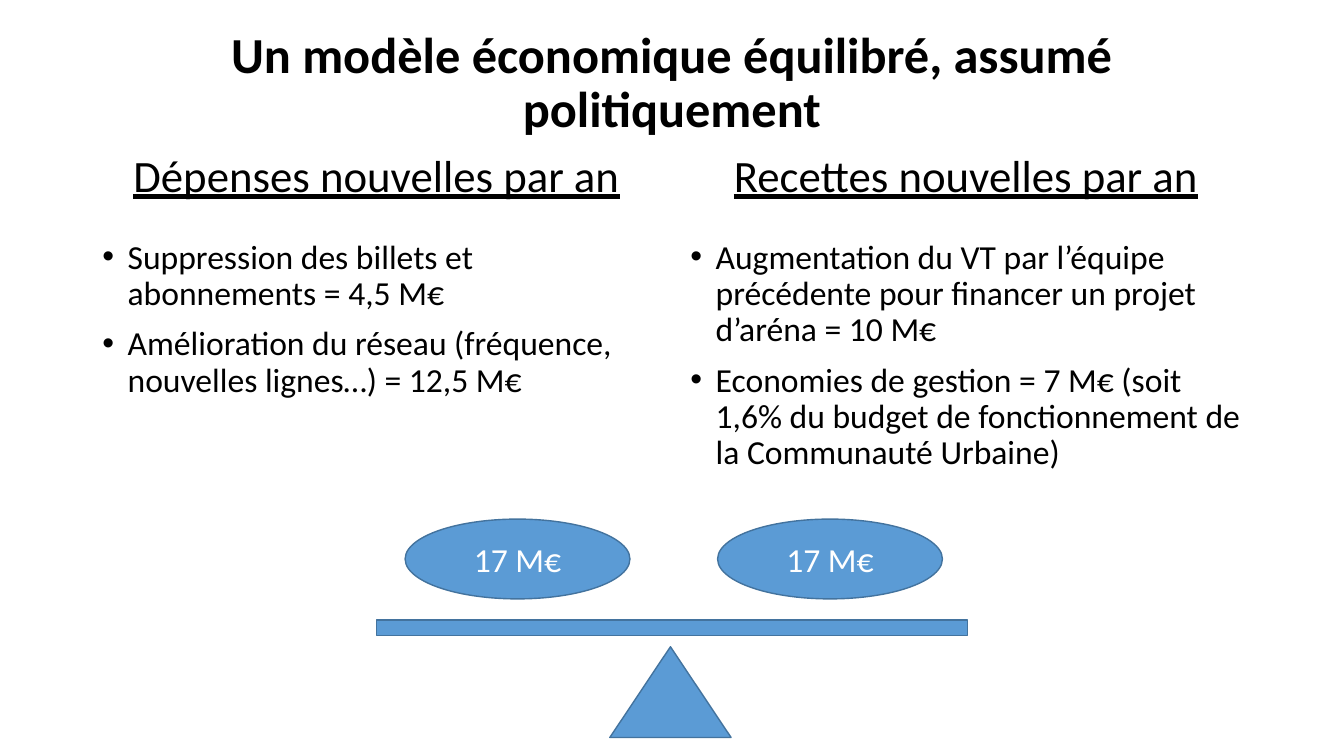
from lxml.etree import SubElement as Sub
from pptx import Presentation
from pptx.dml.color import RGBColor
from pptx.enum.shapes import MSO_SHAPE as Kind
from pptx.enum.text import MSO_ANCHOR as Anchor, MSO_AUTO_SIZE as Auto, PP_ALIGN as Align
from pptx.oxml.ns import qn
from pptx.util import Pt


def color(code):
    return RGBColor.from_string(code)


class Deck:
    font, ink, fill, edge, light = "Calibri", "000000", "5B9BD5", "43739E", "FFFFFF"

    def __init__(self, wide, high):
        self.prs = Presentation()
        self.prs.slide_width, self.prs.slide_height = Pt(wide), Pt(high)
        self.slide = self.prs.slides.add_slide(self.prs.slide_layouts[4])
        self.slots = {p.placeholder_format.idx: p for p in self.slide.placeholders}

    def add_text(self, par, text, size, ink, bold=False, line=False):
        run = par.add_run()
        run.text = text
        font = run.font
        font.name, font.size, font.bold, font.underline = self.font, Pt(size), bold, line
        font.color.rgb = color(ink)

    def place(self, idx, box, anchor):
        slot = self.slots[idx]
        slot.left, slot.top, slot.width, slot.height = map(Pt, box)
        frame = slot.text_frame
        frame.word_wrap, frame.auto_size = True, Auto.NONE
        frame.vertical_anchor = anchor
        return frame

    def head(self, idx, box, text, size, anchor=Anchor.TOP, **style):
        par = self.place(idx, box, anchor).paragraphs[0]
        par.alignment, par.line_spacing, par.space_before = Align.CENTER, 0.9, Pt(0)
        self.add_text(par, text, size, self.ink, **style)

    def points(self, idx, box, items):
        frame = self.place(idx, box, Anchor.TOP)
        for n, text in enumerate(items):
            par = frame.add_paragraph() if n else frame.paragraphs[0]
            props = par._p.get_or_add_pPr()
            props.set("marL", str(Pt(18)))
            props.set("indent", str(Pt(-18)))
            Sub(props, qn("a:buFont"), typeface="Arial")
            Sub(props, qn("a:buChar"), char="•")
            par.alignment, par.line_spacing = Align.LEFT, 0.9
            par.space_before = Pt(10 if n else 0)
            self.add_text(par, text, 24, self.ink)

    def shape(self, kind, box, text=None):
        item = self.slide.shapes.add_shape(kind, *map(Pt, box))
        item.shadow.inherit = False
        item.fill.solid()
        item.fill.fore_color.rgb = color(self.fill)
        item.line.color.rgb = color(self.edge)
        item.line.width = Pt(1)
        if text:
            item.text_frame.vertical_anchor = Anchor.MIDDLE
            par = item.text_frame.paragraphs[0]
            par.alignment = Align.CENTER
            self.add_text(par, text, 24, self.light)


def main():
    deck = Deck(960, 540)

    # Title
    deck.head(0, (66, 8, 828, 104.4), "Un modèle économique équilibré, assumé politiquement",
              36, Anchor.MIDDLE, bold=True)

    # Spending and income columns
    sides = [
        (66, 406, "Dépenses nouvelles par an", [
            "Suppression des billets et abonnements = 4,5 M€",
            "Amélioration du réseau (fréquence, nouvelles lignes…) = 12,5 M€"]),
        (486, 408, "Recettes nouvelles par an", [
            "Augmentation du VT par l’équipe précédente pour financer un projet d’aréna = 10 M€",
            "Economies de gestion = 7 M€ (soit 1,6% du budget de fonctionnement "
            "de la Communauté Urbaine)"]),
    ]
    for n, (left, wide, name, items) in enumerate(sides):
        deck.head(2 * n + 1, (left, 106, wide, 91.4), name, 32, line=True)
        deck.points(2 * n + 2, (left, 168, wide, 320), items)

    # Balance: pivot, beam and equal weights
    deck.shape(Kind.ISOSCELES_TRIANGLE, (435.6, 462, 86.6, 64.8))
    deck.shape(Kind.RECTANGLE, (269, 442.8, 422, 11))
    for left in (289.4, 512.6):
        deck.shape(Kind.OVAL, (left, 370.8, 160.6, 57), "17 M€")

    deck.prs.save("out.pptx")


if __name__ == "__main__":
    main()
